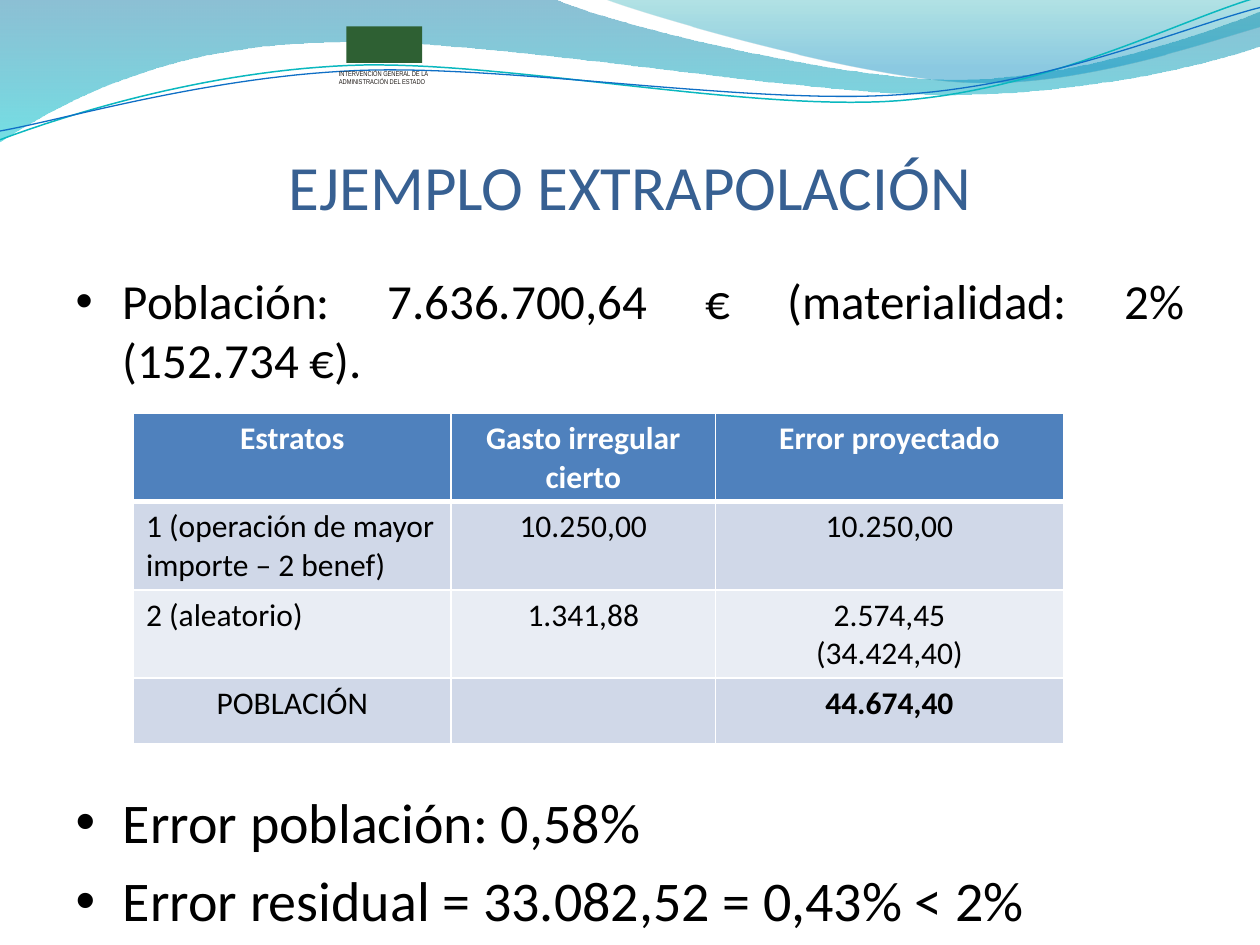
from lxml import etree
from pptx import Presentation
from pptx.dml.color import RGBColor
from pptx.enum import shapes, text
from pptx.oxml.ns import qn
from pptx.util import Inches, Pt

COLORS = {
    "black": "000000", "white": "FFFFFF", "title": "376092", "header": "4F81BD",
    "band dark": "D0D8E8", "band light": "E9EDF4", "emblem": "2E6033", "caption": "1F1A17",
}
FONT = "Calibri"
TITLE = "EJEMPLO EXTRAPOLACIÓN"
# text, size, space before (the large one leaves room for the table)
BULLETS = [
    ("Población: 7.636.700,64 € (materialidad: 2% (152.734 €).", 28, 0),
    ("Error población: 0,58%", 32, 228),
    ("Error residual = 33.082,52 = 0,43% < 2%", 32, 6.4),
]
TABLE = [
    ("Estratos", "Gasto irregular cierto", "Error proyectado"),
    ("1 (operación de mayor importe – 2 benef)", "10.250,00", "10.250,00"),
    ("2 (aleatorio)", "1.341,88", "2.574,45\n(34.424,40)"),
    ("POBLACIÓN", "", "44.674,40"),
]
COLUMN_WIDTHS = (2.52, 2.1, 2.76)
ROW_HEIGHTS = (0.7, 0.7, 0.7, 0.52)
ROW_FILLS = ("header", "band dark", "band light", "band dark")
CAPTION = ("INTERVENCIÓN GENERAL DE LA", "ADMINISTRACIÓN DEL ESTADO")

# A point pair is a straight segment, six numbers are a Bézier segment.
# Gradient stops: position, colour, opacity in percent.
WAVES = [
    {"start": (0, 0),
     "segments": [(4.4, -0.01), (4.76, 0.17, 6.64, 0.63, 7.58, 0.63),
                  (8.53, 0.63, 9.58, 0.26, 10, 0.09), (10.01, 0.36),
                  (9.83, 0.44, 8.7, 0.76, 7.46, 0.75), (6.22, 0.75, 3.82, 0.28, 2.57, 0.34),
                  (1.29, 0.36, 0.46, 0.83, -0.01, 1.13)],
     "stops": [(0, "0074A1", 45), (1, "00C6CF", 55)]},
    {"start": (4.79, -0.01),
     "segments": [(5.09, 0.11, 6.82, 0.62, 7.69, 0.65), (8.56, 0.69, 9.61, 0.32, 10, 0.21),
                  (10, 0)],
     "stops": [(0, "00A1A9", 30), (0.8, "008BBF", 45)]},
    {"start": (0, 1.11),
     "segments": [(0.48, 0.93, 1.58, 0.57, 2.77, 0.52), (3.95, 0.47, 5.93, 0.89, 7.13, 0.8),
                  (8.33, 0.71, 9.38, 0.15, 9.98, -0.02)],
     "line": ("0AB8BF", 0.85)},
    {"start": (0, 1.04),
     "segments": [(0.47, 0.96, 1.64, 0.61, 2.83, 0.56), (4.03, 0.51, 5.97, 0.84, 7.17, 0.75),
                  (8.36, 0.67, 9.41, 0.21, 10, 0.06)],
     "line": ("0F6FC6", 0.75)},
]
CURVE_STEPS = 30


def rgb(name):
    return RGBColor.from_string(COLORS[name])


def place(shape, left, top, width, height):
    shape.left, shape.top = Inches(left), Inches(top)
    shape.width, shape.height = Inches(width), Inches(height)


def style(paragraph, size, color, font=FONT, bold=False, align=None):
    paragraph.alignment = align
    for run in paragraph.runs:
        run.font.name, run.font.size, run.font.bold = font, Pt(size), bold
        run.font.color.rgb = rgb(color)


def trace(start, segments):
    """Return the points after start, with each Bézier segment sampled."""
    points, (x0, y0) = [], start
    for segment in segments:
        if len(segment) == 2:
            points.append(segment)
        else:
            x1, y1, x2, y2, x3, y3 = segment
            for step in range(1, CURVE_STEPS + 1):
                t = step / CURVE_STEPS
                a, b, c, d = (1 - t) ** 3, 3 * t * (1 - t) ** 2, 3 * t * t * (1 - t), t ** 3
                points.append((a * x0 + b * x1 + c * x2 + d * x3,
                               a * y0 + b * y1 + c * y2 + d * y3))
        x0, y0 = segment[-2:]
    return points


def add_wave(slide, wave):
    filled = "stops" in wave
    builder = slide.shapes.build_freeform(*map(Inches, wave["start"]))
    points = [(Inches(x), Inches(y)) for x, y in trace(wave["start"], wave["segments"])]
    builder.add_line_segments(points, close=filled)
    shape = builder.convert_to_shape()
    shape.shadow.inherit = False
    if not filled:
        color, width = wave["line"]
        shape.fill.background()
        shape.line.color.rgb = RGBColor.from_string(color)
        shape.line.width = Pt(width)
        return
    shape.line.fill.background()
    shape.fill.gradient()
    shape.fill.gradient_angle = 270
    for stop, (position, color, _) in zip(shape.fill.gradient_stops, wave["stops"]):
        stop.position = position
        stop.color.rgb = RGBColor.from_string(color)
    colors = shape._element.spPr.findall(".//" + qn("a:srgbClr"))
    for element, (_, _, opacity) in zip(colors, wave["stops"]):
        etree.SubElement(element, qn("a:alpha"), val=str(opacity * 1000))


def add_borders(cell, widths):
    properties = cell._tc.get_or_add_tcPr()
    for side, width in widths.items():
        line = etree.SubElement(properties, qn("a:ln" + side), w=str(Pt(width)))
        fill = etree.SubElement(line, qn("a:solidFill"))
        etree.SubElement(fill, qn("a:srgbClr"), val=COLORS["white"])


def add_emblem(slide):
    mark = slide.shapes.add_shape(shapes.MSO_SHAPE.RECTANGLE, Inches(2.75), Inches(0.21),
                                  Inches(0.6), Inches(0.29))
    mark.shadow.inherit = False
    mark.fill.solid()
    mark.fill.fore_color.rgb = rgb("emblem")
    mark.line.fill.background()
    caption = slide.shapes.add_textbox(Inches(2.69), Inches(0.55), Inches(0.73), Inches(0.13))
    frame = caption.text_frame
    frame.margin_left = frame.margin_right = frame.margin_top = frame.margin_bottom = 0
    frame.text = "\n".join(CAPTION)
    for paragraph in frame.paragraphs:
        style(paragraph, 4, "caption", font="Arial Narrow")


def fill_placeholders(slide):
    title, body = slide.shapes.title, slide.placeholders[1]
    place(title, 0.69, 0.99, 8.62, 0.96)
    title.text_frame.text = TITLE
    title.text_frame.vertical_anchor = text.MSO_ANCHOR.MIDDLE
    style(title.text_frame.paragraphs[0], 36, "title", align=text.PP_ALIGN.CENTER)

    place(body, 0.5, 2.1, 9, 5.28)
    frame = body.text_frame
    frame.text = "\n".join(bullet[0] for bullet in BULLETS)
    frame.auto_size = text.MSO_AUTO_SIZE.NONE
    for paragraph, (_, size, space) in zip(frame.paragraphs, BULLETS):
        style(paragraph, size, "black", align=text.PP_ALIGN.JUSTIFY)
        paragraph.space_before = Pt(space)


def add_strata_table(slide):
    table = slide.shapes.add_table(len(TABLE), len(COLUMN_WIDTHS), Inches(1.06), Inches(3.28),
                                   Inches(sum(COLUMN_WIDTHS)), Inches(sum(ROW_HEIGHTS))).table
    for column, width in zip(table.columns, COLUMN_WIDTHS):
        column.width = Inches(width)
    for r, values in enumerate(TABLE):
        table.rows[r].height = Inches(ROW_HEIGHTS[r])
        header, total = r == 0, r == len(TABLE) - 1
        for c, value in enumerate(values):
            cell = table.cell(r, c)
            add_borders(cell, {"L": 1, "R": 1, "T": 3 if r == 1 else 1, "B": 3 if header else 1})
            cell.fill.solid()
            cell.fill.fore_color.rgb = rgb(ROW_FILLS[r])
            cell.text_frame.text = value
            left = c == 0 and not (header or total)
            for paragraph in cell.text_frame.paragraphs:
                style(paragraph, 18, "white" if header else "black",
                      bold=header or (total and c == 2),
                      align=text.PP_ALIGN.LEFT if left else text.PP_ALIGN.CENTER)


def main():
    presentation = Presentation()
    presentation.slide_width, presentation.slide_height = Inches(10), Inches(7.5)
    slide = presentation.slides.add_slide(presentation.slide_layouts[1])
    for wave in WAVES:
        add_wave(slide, wave)
    add_emblem(slide)
    fill_placeholders(slide)
    add_strata_table(slide)
    presentation.save("out.pptx")


if __name__ == "__main__":
    main()
